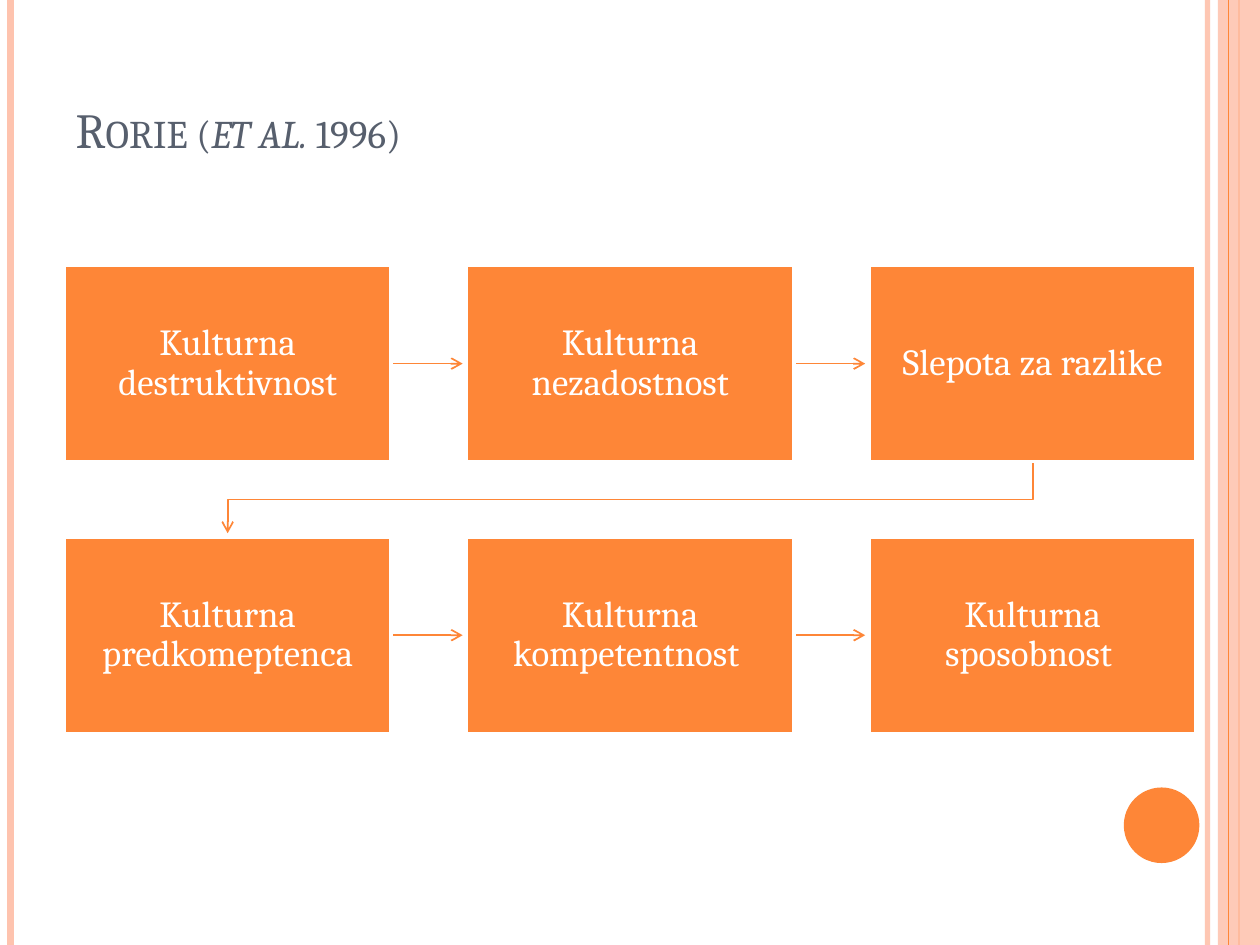
from lxml import etree
from pptx import Presentation
from pptx.dml.color import RGBColor
from pptx.enum import shapes, text
from pptx.oxml import ns
from pptx.util import Pt

ORANGE, PEACH, WHITE, SLATE = "FE8637", "FEC3AE", "FFFFFF", "575F6D"
FONT = "Cambria"
WIDTH, HEIGHT = 720, 540
STEPS = [
    ["Kulturna destruktivnost", "Kulturna nezadostnost", "Slepota za razlike"],
    ["Kulturna predkomeptenca", "Kulturna kompetentnost ", "Kulturna sposobnost "],
]


def color(value):
    return RGBColor.from_string(value)


def set_alpha(shape, percent):
    first_color = shape._element.spPr.find(".//" + ns.qn("a:srgbClr"))
    etree.SubElement(first_color, ns.qn("a:alpha")).set("val", str(percent * 1000))


def add_arrowhead(shape):
    line = shape._element.spPr.find(ns.qn("a:ln"))
    etree.SubElement(line, ns.qn("a:tailEnd")).set("type", "arrow")


def add_line(slide, start, end, line_color, width):
    connector = slide.shapes.add_connector(
        shapes.MSO_CONNECTOR.STRAIGHT, *(Pt(value) for value in (*start, *end)))
    connector.line.color.rgb = color(line_color)
    connector.line.width = Pt(width)
    etree.SubElement(connector._element.spPr, ns.qn("a:effectLst"))
    return connector


def add_filled(slide, kind, box, fill):
    shape = slide.shapes.add_shape(kind, *(Pt(value) for value in box))
    shape.shadow.inherit = False
    shape.fill.solid()
    shape.fill.fore_color.rgb = color(fill)
    shape.line.fill.background()
    return shape


def add_frame(slide, left, top, width, height):
    """Stripes down both edges and the disc at the lower right."""
    def stripe(x, line_color, line_width):
        return add_line(slide, (left + x, top), (left + x, top + height),
                        line_color, line_width)

    inner = stripe(width - 30, PEACH, 3)
    set_alpha(inner, 93)
    stripe(6, PEACH, 4.5)
    stripe(width - 12, ORANGE, 1.5)
    band = add_filled(slide, shapes.MSO_SHAPE.RECTANGLE,
                      (left + width - 24, top, 24, height), PEACH)
    set_alpha(band, 87)
    stripe(width - 18, ORANGE, 0.75)
    add_filled(slide, shapes.MSO_SHAPE.OVAL,
               (left + width - 77.8, top + height - 90, 43.2, 43.2), ORANGE)


def add_title(slide, left, top, width, height):
    title = slide.shapes.title
    title.left, title.top, title.width, title.height = map(
        Pt, (left, top, width, height))
    frame = title.text_frame
    frame.vertical_anchor = text.MSO_ANCHOR.BOTTOM
    paragraph = frame.paragraphs[0]
    paragraph.alignment = text.PP_ALIGN.LEFT
    for words, italic in (("Rorie (", False), ("et al.", True), (" 1996)", False)):
        run = paragraph.add_run()
        run.text = words
        run.font.size = Pt(28)
        run.font.name = FONT
        run.font.italic = italic
        run.font.color.rgb = color(SLATE)
        run.font._element.set("cap", "small")


def add_step(slide, left, top, width, height, words):
    step = add_filled(slide, shapes.MSO_SHAPE.RECTANGLE,
                      (left, top, width, height), ORANGE)
    step.line.color.rgb = color(WHITE)
    step.line.width = Pt(2)
    frame = step.text_frame
    frame.word_wrap = True
    frame.vertical_anchor = text.MSO_ANCHOR.MIDDLE
    frame.margin_left = frame.margin_right = Pt(11.5)
    frame.margin_top = frame.margin_bottom = Pt(11.5)
    paragraph = frame.paragraphs[0]
    paragraph.text = words
    paragraph.alignment = text.PP_ALIGN.CENTER
    paragraph.line_spacing = 0.9
    paragraph.font.size = Pt(21)
    paragraph.font.name = FONT
    paragraph.font.color.rgb = color(WHITE)
    return step


def add_return_arrow(slide, start, end, bend):
    """Bent arrow from the end of one row to the start of the next."""
    (x1, y1), (x2, y2) = start, end
    builder = slide.shapes.build_freeform(Pt(x1), Pt(y1))
    builder.add_line_segments(
        [(Pt(x), Pt(y)) for x, y in ((x1, bend), (x2, bend), (x2, y2))], close=False)
    arrow = builder.convert_to_shape()
    arrow.shadow.inherit = False
    arrow.fill.background()
    arrow.line.color.rgb = color(ORANGE)
    arrow.line.width = Pt(1)
    add_arrowhead(arrow)


def add_process(slide, left, top, width, height, rows):
    step_width, step_height, clearance = 187, 112.2, 2.2
    column_pitch = (width - step_width) / (len(rows[0]) - 1)
    row_pitch = (height - step_height) / (len(rows) - 1)
    for row, labels in enumerate(rows):
        y = top + row * row_pitch
        middle = y + step_height / 2
        if row < len(rows) - 1:
            add_return_arrow(slide,
                             (left + width - step_width / 2, y + step_height),
                             (left + step_width / 2, y + row_pitch - clearance),
                             y + (step_height + row_pitch) / 2)
        for column, words in enumerate(labels):
            x = left + column * column_pitch
            # Arrows go in before their step, so its white outline covers the start
            arrow = None
            if column < len(labels) - 1:
                arrow = add_line(slide, (x + step_width, middle),
                                 (x + column_pitch - clearance, middle), ORANGE, 1)
                add_arrowhead(arrow)
            step = add_step(slide, x, y, step_width, step_height, words)
            if arrow is not None:
                arrow.begin_connect(step, 3)


def main():
    presentation = Presentation()
    presentation.slide_width, presentation.slide_height = Pt(WIDTH), Pt(HEIGHT)
    slide = presentation.slides.add_slide(presentation.slide_layouts[5])
    add_frame(slide, 0, 0, WIDTH, HEIGHT)
    add_title(slide, 36, 21.6, 648, 72.7)
    add_process(slide, 36.6, 151.7, 647, 267.4, STEPS)
    presentation.save("out.pptx")


if __name__ == "__main__":
    main()
